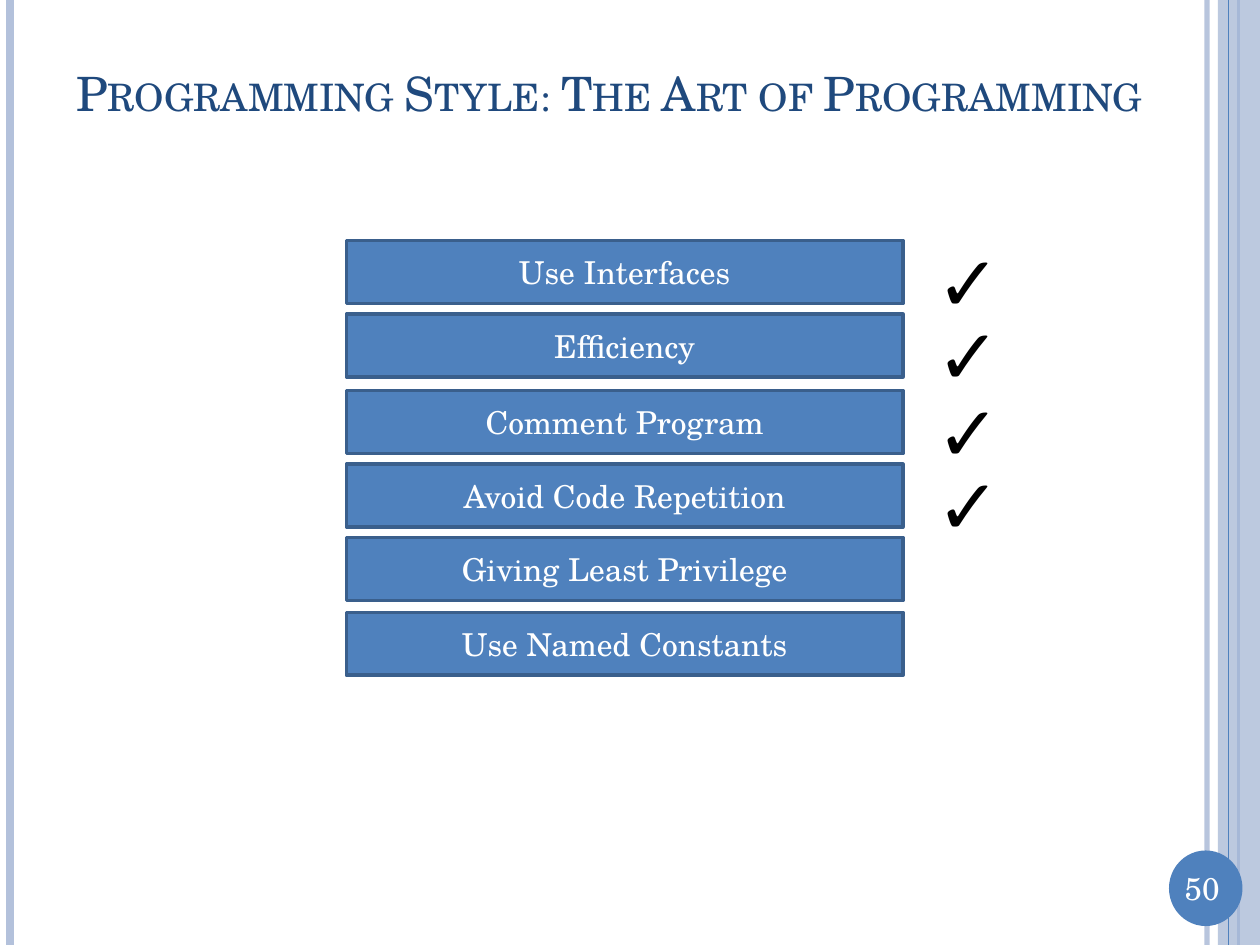
from lxml.etree import SubElement
from pptx import Presentation
from pptx.dml.color import RGBColor
from pptx.enum.shapes import MSO_CONNECTOR, MSO_SHAPE
from pptx.enum.text import MSO_ANCHOR, PP_ALIGN
from pptx.oxml.ns import qn
from pptx.util import Pt

FONT = "TeX Gyre Schola"
BLUE, PALE, EDGE, NAVY = "4F81BD", "B3C1DB", "3A5F8C", "1F497D"


def rgb(color):
    return RGBColor.from_string(color)


def write(sp, text, size=18, color="FFFFFF", align=PP_ALIGN.CENTER,
          anchor=MSO_ANCHOR.MIDDLE, small_caps=False):
    tf = sp.text_frame
    tf.word_wrap = True
    tf.vertical_anchor = anchor
    p = tf.paragraphs[0]
    p.alignment = align
    r = p.add_run()
    r.text = text
    r.font.name = FONT
    r.font.size = Pt(size)
    r.font.color.rgb = rgb(color)
    if small_caps:
        r.font._element.set("cap", "small")
    return tf


prs = Presentation()
prs.slide_width, prs.slide_height = Pt(720), Pt(540)
s = prs.slides.add_slide(prs.slide_layouts[6])

# Vertical rules and the band at the right edge: x, colour, width, opacity
rules = [(689.8, PALE, 3, 93), (5.8, PALE, 4.5, 100), (707.8, BLUE, 1.5, 100),
         None, (702, BLUE, 0.75, 100)]
for rule in rules:
    if rule is None:
        sp = s.shapes.add_shape(MSO_SHAPE.RECTANGLE, Pt(696), 0, Pt(24), Pt(540))
        sp.shadow.inherit = False
        sp.line.fill.background()
        sp.fill.solid()
        sp.fill.fore_color.rgb = rgb(PALE)
        fill, opacity = sp._element.spPr, 87
    else:
        x, color, width, opacity = rule
        line = s.shapes.add_connector(MSO_CONNECTOR.STRAIGHT, Pt(x), 0, Pt(x), Pt(540))
        line.line.color.rgb = rgb(color)
        line.line.width = Pt(width)
        fill = line._element.spPr.find(qn("a:ln"))
        SubElement(line._element.spPr, qn("a:effectLst"))
    if opacity < 100:
        clr = fill.find(qn("a:solidFill")).find(qn("a:srgbClr"))
        SubElement(clr, qn("a:alpha")).set("val", str(opacity * 1000))

# Slide number badge
sp = s.shapes.add_shape(MSO_SHAPE.OVAL, Pt(668), Pt(486), Pt(42), Pt(43.2))
sp.shadow.inherit = False
sp.fill.solid()
sp.fill.fore_color.rgb = rgb(BLUE)
sp.line.fill.background()
number = s.shapes.add_textbox(Pt(666), Pt(493.2), Pt(42), Pt(28.8))
write(number, "50", anchor=MSO_ANCHOR.TOP)

# Title
title = s.shapes.add_textbox(Pt(36), Pt(21.6), Pt(624), Pt(62.6))
tf = write(title, "Programming Style: The Art of Programming", size=27,
           color=NAVY, small_caps=True)
tf.margin_left = tf.margin_right = 0

# Style rules, ticked when already covered: top, label, ticked
items = [
    (137.5, "Use Interfaces", True),
    (179.5, "Efficiency", True),
    (223.2, "Comment Program", True),
    (265.2, "Avoid Code Repetition", True),
    (307.2, "Giving Least Privilege", False),
    (349.9, "Use Named Constants", False),
]
for top, label, ticked in items:
    sp = s.shapes.add_shape(MSO_SHAPE.RECTANGLE, Pt(198), Pt(top), Pt(318), Pt(36))
    sp.shadow.inherit = False
    sp.fill.solid()
    sp.fill.fore_color.rgb = rgb(BLUE)
    sp.line.color.rgb = rgb(EDGE)
    sp.line.width = Pt(2)
    write(sp, label)
    if ticked:
        tick = s.shapes.add_textbox(Pt(528), Pt(top - 7.2), Pt(36), Pt(60.5))
        write(tick, "✓", size=44, color="000000", align=PP_ALIGN.LEFT,
              anchor=MSO_ANCHOR.TOP)

prs.save("out.pptx")
